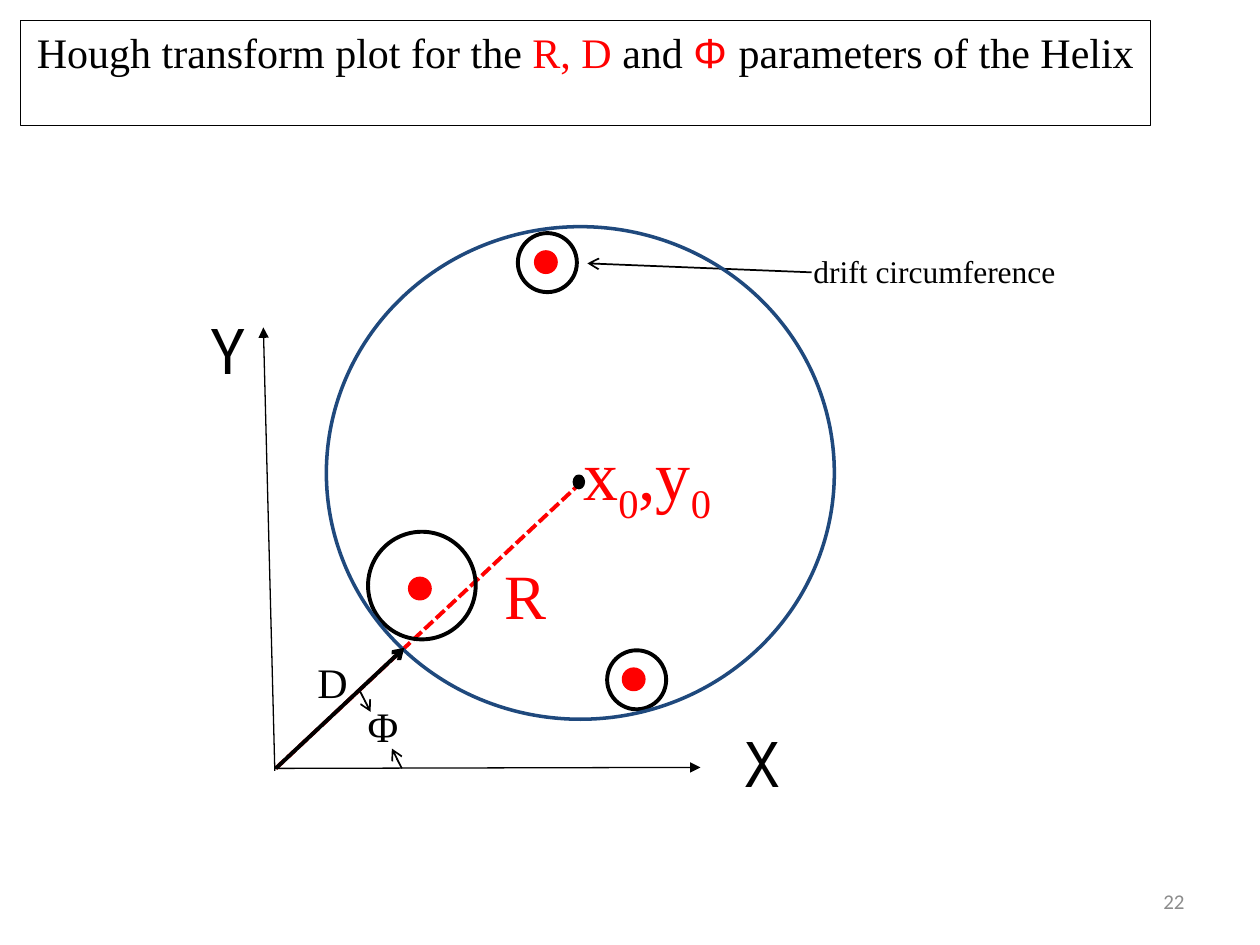
from lxml import etree
from pptx import Presentation
from pptx import util as u
from pptx.dml.color import RGBColor
from pptx.enum import dml, shapes, text
from pptx.oxml.ns import qn

BLACK, RED, NAVY, GREY = "000000", "FF0000", "1F497D", "8C8C8C"
SERIF, SANS, AXIS = "Times New Roman", "Arial", "Noto Sans Mono"


def rgb(code):
    return RGBColor.from_string(code)


def cm(*lengths):
    return [u.Cm(length) for length in lengths]


class HelixSlide:
    def __init__(self, prs):
        self.slide = prs.slides.add_slide(prs.slide_layouts[5])
        self.shapes = self.slide.shapes

    def set_font(self, font, size, color, name=SERIF):
        font.size, font.name = u.Pt(size), name
        font.color.rgb = rgb(color)

    def set_outline(self, line, color, width):
        line.color.rgb = rgb(color)
        line.width = u.Pt(width)

    def title(self, parts, at):
        """Fill the title from (words, colour, font) parts."""
        title = self.shapes.title
        title.left, title.top, title.width, title.height = cm(*at)
        self.set_outline(title.line, BLACK, 0.75)
        frame = title.text_frame
        frame.word_wrap = False
        frame.auto_size = text.MSO_AUTO_SIZE.SHAPE_TO_FIT_TEXT
        frame.vertical_anchor = text.MSO_ANCHOR.TOP
        heading = frame.paragraphs[0]
        heading.alignment = text.PP_ALIGN.CENTER
        for words, color, name in parts:
            run = heading.add_run()
            run.text = words
            self.set_font(run.font, 24, color, name)

    def label(self, words, at, size, color=BLACK, name=SERIF, subscript=""):
        box = self.shapes.add_textbox(*cm(*at))
        frame = box.text_frame
        frame.word_wrap = False
        frame.auto_size = text.MSO_AUTO_SIZE.SHAPE_TO_FIT_TEXT
        caption = frame.paragraphs[0]
        self.set_font(caption.font, size, color, name)
        caption.add_run().text = words
        if subscript:
            index = caption.add_run()
            index.text = subscript
            index.font._element.set("baseline", "-25000")

    def page_number(self, number, at):
        frame = self.shapes.add_textbox(*cm(*at)).text_frame
        frame.word_wrap = True
        frame.vertical_anchor = text.MSO_ANCHOR.MIDDLE
        page = frame.paragraphs[0]
        page.alignment = text.PP_ALIGN.RIGHT
        self.set_font(page.font, 12, GREY, "Calibri")
        page.add_run().text = number

    def ellipse(self, at, color, width=2, filled=False):
        oval = self.shapes.add_shape(shapes.MSO_SHAPE.OVAL, *cm(*at))
        oval.shadow.inherit = False
        self.set_outline(oval.line, color, width)
        if filled:
            oval.fill.solid()
            oval.fill.fore_color.rgb = rgb(color)
        else:
            oval.fill.background()

    def line(self, start, end, width, color=BLACK, tip=None, dash=None):
        """Draw a line; tip is the arrowhead type at its end."""
        line = self.shapes.add_connector(
            shapes.MSO_CONNECTOR.STRAIGHT, *cm(*start, *end))
        self.set_outline(line.line, color, width)
        if dash:
            line.line.dash_style = dash
        if tip:
            etree.SubElement(line.line._get_or_add_ln(), qn("a:tailEnd"), type=tip)
        etree.SubElement(line._element.spPr, qn("a:effectLst"))


def main():
    prs = Presentation()
    prs.slide_width, prs.slide_height = cm(25.4, 19.05)
    helix = HelixSlide(prs)
    origin = (5.56, 15.49)

    helix.page_number("22", (18.21, 17.65, 5.92, 1.02))
    helix.title([("Hough transform plot for the ", BLACK, SERIF),
                 ("R, D", RED, SERIF),
                 (" and ", BLACK, SERIF),
                 ("Φ ", RED, SANS),
                 ("parameters of the Helix", BLACK, SERIF)],
                (0.41, 0.41, 22.78, 1.27))

    helix.label("R", (9.93, 11.1, 1.37, 1.8), 36, RED)
    helix.line(origin, (11.71, 9.73), 2.25, RED,
               dash=dml.MSO_LINE.SQUARE_DOT)
    helix.label("D", (6.15, 13.11, 1.14, 1.27), 24)

    helix.line((5.54, 15.54), (5.31, 6.6), 0.75, tip="triangle")
    helix.line((5.54, 15.49), (14.12, 15.47), 0.75, tip="triangle")
    helix.label("X", (14.73, 14.48, 1.22, 1.8), 36, name=AXIS)
    helix.label("Y", (3.96, 6.15, 1.22, 1.8), 36, name=AXIS)

    for left, top in [(12.57, 13.49), (8.26, 11.66), (10.8, 5.08)]:
        helix.ellipse((left, top, 0.41, 0.41), RED, filled=True)
    for left, top, size in [(10.44, 4.7, 1.19), (7.42, 10.72, 2.17),
                            (12.24, 13.11, 1.19)]:
        helix.ellipse((left, top, size, size), BLACK, 2.25)
    helix.label("drift circumference", (16.15, 4.95, 5.44, 1.02), 18)
    helix.line((16.36, 5.49), (11.84, 5.31), 1, tip="arrow")

    helix.ellipse((6.58, 4.57, 10.24, 9.93), NAVY)
    helix.line(origin, (8.15, 13.06), 2.25, tip="arrow")
    helix.label("Φ", (7.16, 14, 1.17, 1.27), 24)
    helix.line((8.1, 15.49), (7.9, 15.09), 1, tip="arrow")
    helix.line((7.26, 13.94), (7.47, 14.35), 1, tip="arrow")

    helix.label("x", (11.51, 8.56, 1.7, 1.96), 40, RED, subscript="0")
    helix.label(",y", (12.62, 8.56, 2.06, 1.96), 40, RED, subscript="0")
    helix.ellipse((11.58, 9.6, 0.18, 0.23), BLACK, filled=True)
    prs.save("out.pptx")


if __name__ == "__main__":
    main()
